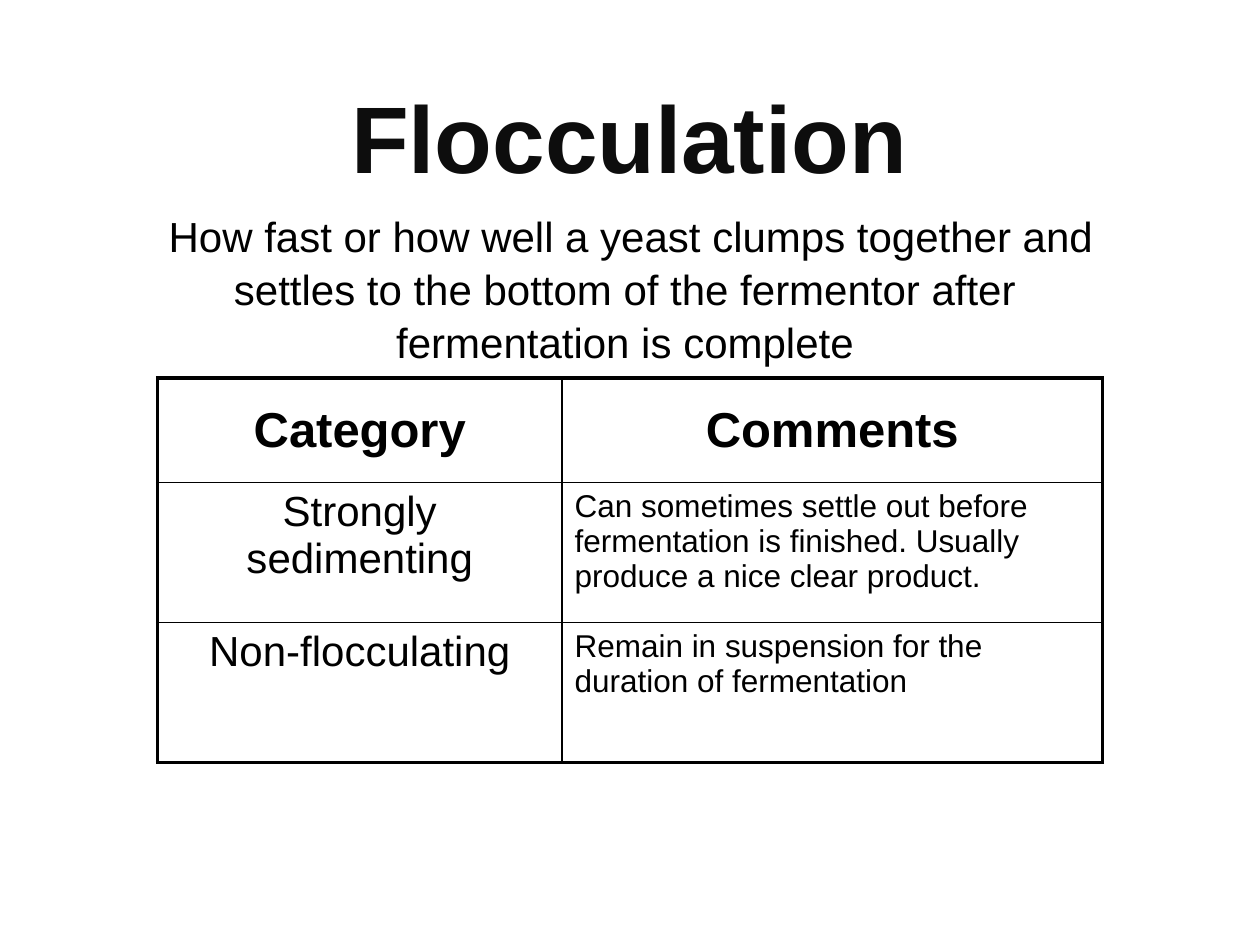
import pptx
import pptx.util
import pptx.dml.color
import pptx.enum.text
import pptx.oxml
import pptx.oxml.ns
from lxml import etree

Inches = pptx.util.Inches
ALIGN = pptx.enum.text.PP_ALIGN
ANCHOR = pptx.enum.text.MSO_ANCHOR

# Content
TITLE = "Flocculation"
DEFINITION = (" How fast or how well a yeast clumps together and settles to the "
              "bottom of the fermentor after fermentation is complete")
HEADER = ("Category", "Comments")
CATEGORIES = [
    ("Strongly sedimenting",
     "Can sometimes settle out before fermentation is finished. "
     "Usually produce a nice clear product."),
    ("Non-flocculating", "Remain in suspension for the duration of fermentation"),
]

THEME = {
    "font": "Arial", "ink": "000000", "title_ink": "0D0D0D",
    "title": 54, "header": 28, "body": 24, "comment": 18,
    "outer_line": 2.25, "inner_line": 1, "title_line": 1.5,
}
COLUMN_WIDTHS = (3.21, 4.29)
ROW_HEIGHTS = (0.83, 1.11, 1.11)


def write_text(frame, text, size, color=THEME["ink"], bold=False,
               align=ALIGN.CENTER, anchor=ANCHOR.TOP, line_spacing=None):
    """Fill a text frame with one formatted paragraph and return its run."""
    frame.word_wrap = True
    frame.vertical_anchor = anchor
    para = frame.paragraphs[0]
    para.alignment = align
    para.line_spacing = line_spacing
    span = para.add_run()
    span.text = text
    span.font.name = THEME["font"]
    span.font.size = pptx.util.Pt(size)
    span.font.bold = bold
    span.font.color.rgb = pptx.dml.color.RGBColor.from_string(color)
    return span


def make_line(tag, points, color):
    """Build a solid line element for a cell border or a text outline."""
    line = etree.Element(pptx.oxml.ns.qn(tag), w=str(pptx.util.Pt(points)))
    fill = etree.SubElement(line, pptx.oxml.ns.qn("a:solidFill"))
    etree.SubElement(fill, pptx.oxml.ns.qn("a:srgbClr"), val=color)
    return line


def set_borders(cell, left, right, top, bottom):
    """Each flag tells whether that side lies on the table's outer edge."""
    sides = {"L": left, "R": right, "T": top, "B": bottom}
    properties = cell._tc.get_or_add_tcPr()
    for index, (side, is_outer) in enumerate(sides.items()):
        points = THEME["outer_line" if is_outer else "inner_line"]
        properties.insert(index, make_line(f"a:ln{side}", points, THEME["ink"]))


def add_box(page, left, top, width, height):
    return page.shapes.add_textbox(*map(Inches, (left, top, width, height)))


def add_category_table(page):
    rows = [HEADER] + CATEGORIES
    last_row, last_column = len(rows) - 1, len(HEADER) - 1
    frame = page.shapes.add_table(
        len(rows), len(HEADER), Inches(1.25), Inches(3),
        Inches(sum(COLUMN_WIDTHS)), Inches(sum(ROW_HEIGHTS)))
    table = frame.table
    table.first_row = table.horz_banding = False
    for column, width in zip(table.columns, COLUMN_WIDTHS):
        column.width = Inches(width)
    for row, height in zip(table.rows, ROW_HEIGHTS):
        row.height = Inches(height)

    header_format = dict(size=THEME["header"], bold=True)
    body_formats = (dict(size=THEME["body"]),
                    dict(size=THEME["comment"], align=ALIGN.LEFT))
    for r, texts in enumerate(rows):
        for c, text in enumerate(texts):
            cell = table.cell(r, c)
            write_text(cell.text_frame, text,
                       **(header_format if r == 0 else body_formats[c]))
            cell.vertical_anchor = ANCHOR.MIDDLE if r == 0 else ANCHOR.TOP
            cell.fill.background()
            set_borders(cell, c == 0, c == last_column, r == 0, r == last_row)


def main():
    deck = pptx.Presentation()
    deck.slide_width, deck.slide_height = Inches(10), Inches(7.5)
    page = deck.slides.add_slide(deck.slide_layouts[6])

    # Title with a thin outline in its own colour
    title_box = add_box(page, 0.33, 0.33, 9.33, 1.25)
    span = write_text(title_box.text_frame, TITLE, THEME["title"],
                      color=THEME["title_ink"], bold=True, anchor=ANCHOR.BOTTOM)
    span.font._element.insert(
        0, make_line("a:ln", THEME["title_line"], THEME["title_ink"]))

    # Definition
    definition_box = add_box(page, 1, 1.58, 7.92, 0.58)
    definition_box.text_frame.margin_top = Inches(0.07)
    write_text(definition_box.text_frame, DEFINITION, THEME["body"],
               line_spacing=1.05)

    # Categories and comments
    add_category_table(page)
    deck.save("out.pptx")


if __name__ == "__main__":
    main()
